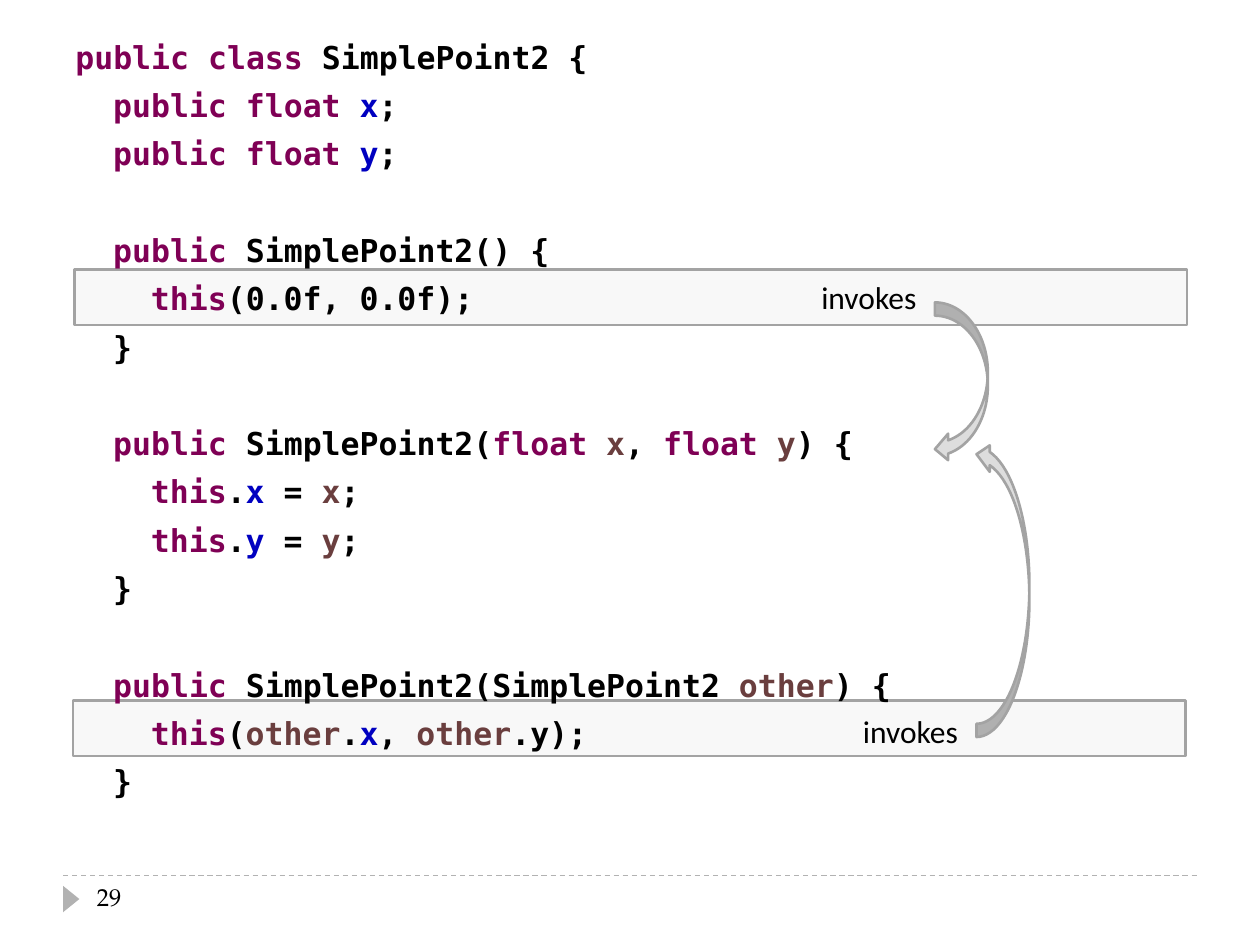
from pptx import Presentation, util as u
from pptx.dml.color import RGBColor
from pptx.enum import dml, shapes, text
from pptx.oxml.ns import qn
from lxml import etree

COLORS = {
    "keyword": "7F0055", "field": "0000C0", "parameter": "6A3E3E", "plain": "000000",
    "rule": "B2B2B2", "outline": "A3A3A3", "band": "F8F8F8", "arrow": "DDDDDD",
}
CODE_FONT, LABEL_FONT, NUMBER_FONT = "DejaVu Sans Mono", "Calibri", "TeX Gyre Pagella"
CODE_INDENT = u.Inches(0.3)
LINE_HEIGHT, LINE_GAP = 21.6, 6

K, F, A, P = "keyword", "field", "parameter", "plain"
CLOSE = (1, [(P, "}")])


def field_declaration(name):
    return 1, [(K, "public float "), (F, name), (P, ";")]


def assignment(name):
    return 2, [(K, "this"), (P, "."), (F, name + " "), (P, "= "), (A, name), (P, ";")]


CODE_BLOCKS = [
    [(0, [(K, "public class"), (P, " SimplePoint2 {")]),
     field_declaration("x"), field_declaration("y")],
    [(1, [(K, "public "), (P, "SimplePoint2() {")]),
     (2, [(K, "this"), (P, "(0.0f, 0.0f);")]), CLOSE],
    [(1, [(K, "public "), (P, "SimplePoint2("), (K, "float "), (A, "x"), (P, ", "),
          (K, "float "), (A, "y"), (P, ") {")]),
     assignment("x"), assignment("y"), CLOSE],
    [(1, [(K, "public "), (P, "SimplePoint2(SimplePoint2 "), (A, "other"), (P, ") {")]),
     (2, [(K, "this"), (P, "("), (A, "other"), (P, "."), (F, "x"), (P, ", "),
          (A, "other"), (P, ".y);")]), CLOSE],
]


def color(name):
    return RGBColor.from_string(COLORS[name])


class SlideBuilder:
    def __init__(self, presentation):
        self.width, self.height = presentation.slide_width, presentation.slide_height
        self.slide = presentation.slides.add_slide(presentation.slide_layouts[6])

    def place(self, left, top, width, height):
        return [round(share * side / 100) for share, side in
                zip((left, top, width, height), (self.width, self.height) * 2)]

    def shape(self, kind, box, fill, outline=None, rotation=0, flipped=False):
        shape = self.slide.shapes.add_shape(kind, *self.place(*box))
        shape.shadow.inherit = False
        shape.rotation = rotation
        shape.fill.solid()
        shape.fill.fore_color.rgb = color(fill)
        if outline:
            shape.line.color.rgb = color(outline)
            shape.line.width = u.Pt(1.5)
        else:
            shape.line.fill.background()
        if flipped:
            shape._element.spPr.find(qn("a:xfrm")).set("flipV", "1")

    def rule(self, left, top, width):
        x, y, length, _ = self.place(left, top, width, 0)
        line = self.slide.shapes.add_connector(shapes.MSO_CONNECTOR.STRAIGHT, x, y, x + length, y)
        line.line.color.rgb = color("rule")
        line.line.width = u.Pt(0.75)
        line.line.dash_style = dml.MSO_LINE.DASH
        etree.SubElement(line._element.spPr, qn("a:effectLst"))

    def frame(self, box, wrap=True):
        frame = self.slide.shapes.add_textbox(*self.place(*box)).text_frame
        frame.word_wrap = wrap
        return frame

    def label(self, box, words, font, size, wrap=True):
        frame = self.frame(box, wrap)
        if not wrap:
            frame.auto_size = text.MSO_AUTO_SIZE.SHAPE_TO_FIT_TEXT
        paragraph = frame.paragraphs[0]
        paragraph.text = words
        paragraph.font.name, paragraph.font.size = font, u.Pt(size)
        paragraph.font.color.rgb = color("plain")

    def code(self, box, blocks):
        frame = self.frame(box)
        paragraph = frame.paragraphs[0]
        for block_index, block in enumerate(blocks):
            for line_index, (level, tokens) in enumerate(block):
                if block_index or line_index:
                    paragraph = frame.add_paragraph()
                new_block = block_index and not line_index
                gap = 2 * LINE_GAP + LINE_HEIGHT if new_block else LINE_GAP
                paragraph.space_before = u.Pt(gap)
                paragraph.line_spacing = u.Pt(LINE_HEIGHT)
                paragraph.font.name, paragraph.font.size = CODE_FONT, u.Pt(18)
                paragraph.font.bold = True
                paragraph._p.get_or_add_pPr().set("marL", str(level * CODE_INDENT))
                for kind, words in tokens:
                    run = paragraph.add_run()
                    run.text = words
                    run.font.color.rgb = color(kind)


def main():
    presentation = Presentation()
    presentation.slide_width, presentation.slide_height = u.Inches(10), u.Inches(7.5)
    builder = SlideBuilder(presentation)
    kinds = shapes.MSO_SHAPE

    builder.rule(5, 92.67, 90)
    builder.shape(kinds.ISOSCELES_TRIANGLE, (4.6, 94.27, 2.1, 1.73), "rule", rotation=90)
    for left, top in ((5.9, 28.53), (5.8, 74.13)):
        builder.shape(kinds.RECTANGLE, (left, top, 88.3, 5.87), "band", "outline")
    for left, top, height, flipped in ((74.2, 32, 16.93, False), (77.5, 46.67, 31.33, True)):
        builder.shape(kinds.CURVED_LEFT_ARROW, (left, top, 4.2, height),
                      "arrow", "outline", flipped=flipped)
    for left, top in ((64.2, 28.8), (67.5, 74.67)):
        builder.label((left, top, 9.6, 5.33), "invokes", LABEL_FONT, 18, wrap=False)
    builder.label((6.7, 92.67, 21.7, 5.33), "29", NUMBER_FONT, 14)
    builder.code((5, 3.33, 90, 86.4), CODE_BLOCKS)

    presentation.save("out.pptx")


if __name__ == "__main__":
    main()
